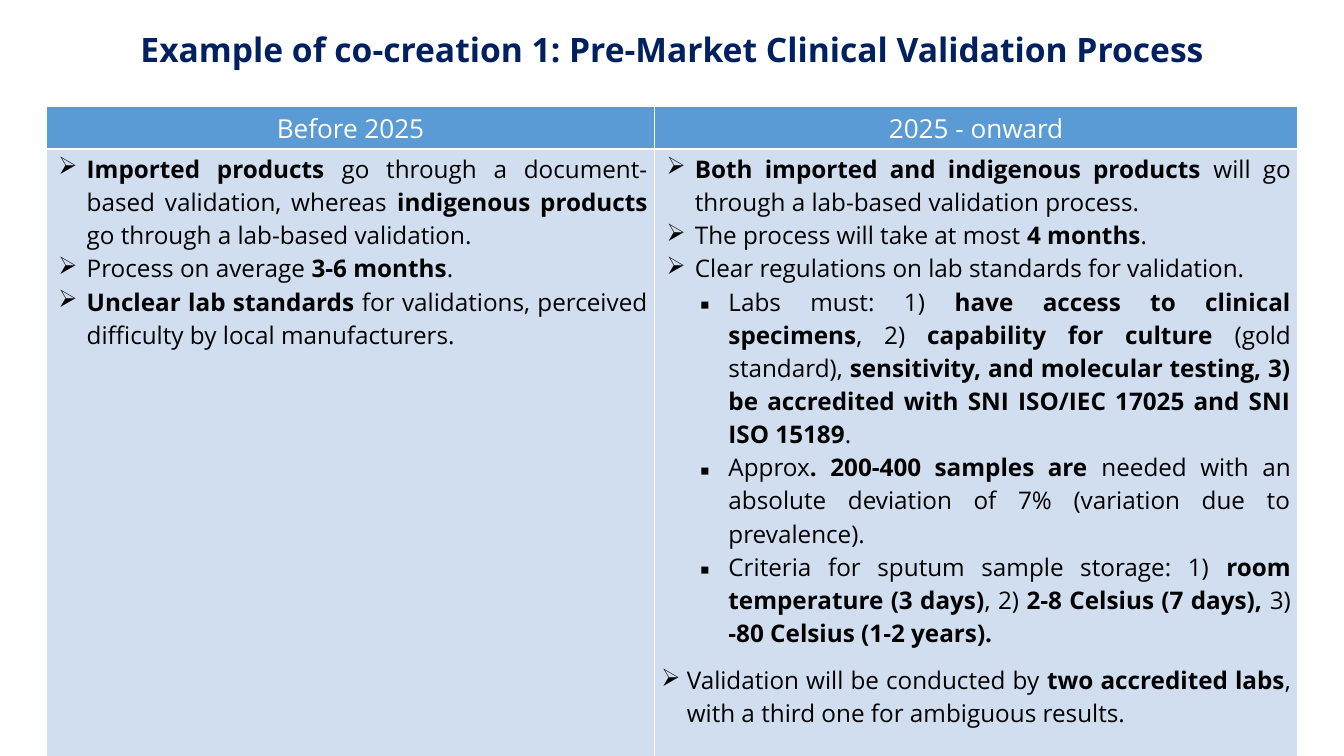
from dataclasses import dataclass

import pptx
import pptx.dml.color
import pptx.enum.text
import pptx.oxml.ns
import pptx.util
from lxml import etree

PX = 9144
FONT = "Open Sans"
ALIGN = pptx.enum.text.PP_ALIGN
ANCHOR = pptx.enum.text.MSO_ANCHOR
NAVY, BLUE, PALE, WHITE, BLACK = "002060", "5B9BD5", "D0DEEF", "FFFFFF", "000000"


@dataclass(frozen=True)
class Span:
    text: str
    bold: bool = False


@dataclass(frozen=True)
class Mark:
    symbol: str
    font: str


ARROW = Mark("➢", "OpenSymbol")
SQUARE = Mark("▪", "Noto Sans Symbols")


@dataclass(frozen=True)
class Bullet:
    spans: tuple[Span, ...]
    level: int = 0
    margin: int = 50
    hanging: int = 42
    before: int = 0
    mark: Mark = ARROW


@dataclass(frozen=True)
class Period:
    heading: str
    width: int
    bullets: tuple[Bullet, ...]


def strong(text: str) -> Span:
    return Span(text, True)


def bullet(*spans: Span) -> Bullet:
    return Bullet(spans)


def sub_bullet(*spans: Span) -> Bullet:
    return Bullet(spans, level=1, margin=100, mark=SQUARE)


PERIODS = (
    Period("Before 2025", 905, (
        bullet(strong("Imported products "),
               Span("go through a document-based validation, whereas "),
               strong("indigenous products "),
               Span("go through a lab-based validation. ")),
        bullet(Span("Process on average "), strong("3-6 months"), Span(". ")),
        bullet(strong("Unclear lab standards "),
               Span("for validations, perceived difficulty by local manufacturers. ")),
    )),
    Period("2025 - onward", 957, (
        bullet(strong("Both imported and indigenous products "),
               Span("will go through a lab-based validation process. ")),
        bullet(Span("The process will take at most "), strong("4 months"), Span(". ")),
        bullet(Span("Clear regulations on lab standards for validation. ")),
        sub_bullet(Span("Labs must: 1) "),
                   strong("have access to clinical specimens"),
                   Span(", 2) "),
                   strong("capability for culture"),
                   Span(" (gold standard), "),
                   strong("sensitivity, and molecular testing, 3) be accredited "
                          "with SNI ISO/IEC 17025 and SNI ISO 15189"),
                   Span(". ")),
        sub_bullet(Span("Approx"),
                   strong(". 200-400 samples are "),
                   Span("needed with an absolute deviation of 7% "
                        "(variation due to prevalence). ")),
        sub_bullet(Span("Criteria for sputum sample storage: 1) "),
                   strong("room temperature (3 days)"),
                   Span(", 2) "),
                   strong("2-8 Celsius (7 days), "),
                   Span("3) "),
                   strong("-80 Celsius (1-2 years). ")),
        Bullet((Span("Validation will be conducted by "),
                strong("two accredited labs"),
                Span(", with a third one for ambiguous results. ")),
               margin=38, hanging=38, before=15),
    )),
)


def px(length: int) -> pptx.util.Emu:
    return pptx.util.Emu(length * PX)


def rgb(value: str) -> pptx.dml.color.RGBColor:
    return pptx.dml.color.RGBColor.from_string(value)


def child(parent, tag: str, **attributes: str):
    element = etree.SubElement(parent, pptx.oxml.ns.qn(tag))
    for key, value in attributes.items():
        element.set(key, value)
    return element


def add_span(paragraph, span: Span, size: int, color: str) -> None:
    run = paragraph.add_run()
    run.text = span.text
    run.font.name = FONT
    run.font.size = pptx.util.Pt(size)
    run.font.bold = span.bold
    run.font.color.rgb = rgb(color)


def style_cell(cell, fill: str, bottom: int) -> None:
    properties = cell._tc.get_or_add_tcPr()
    for tag, points in (("a:lnL", 1), ("a:lnR", 1), ("a:lnT", 1), ("a:lnB", bottom)):
        line = child(properties, tag, w=str(pptx.util.Pt(points)))
        child(child(line, "a:solidFill"), "a:srgbClr", val=WHITE)
    cell.fill.solid()
    cell.fill.fore_color.rgb = rgb(fill)


def add_bullet(paragraph, item: Bullet) -> None:
    paragraph.alignment = ALIGN.JUSTIFY
    paragraph.level = item.level
    paragraph.space_before = pptx.util.Pt(item.before)
    properties = paragraph._p.get_or_add_pPr()
    properties.set("marL", str(px(item.margin)))
    properties.set("indent", str(px(-item.hanging)))
    child(child(properties, "a:buClr"), "a:srgbClr", val=BLACK)
    child(properties, "a:buFont", typeface=item.mark.font)
    child(properties, "a:buChar", char=item.mark.symbol)
    for span in item.spans:
        add_span(paragraph, span, 26, BLACK)


def add_title(slide, text: str) -> None:
    title = slide.shapes.title
    title.left, title.top, title.width, title.height = map(px, (138, 20, 1725, 113))
    title.text_frame.vertical_anchor = ANCHOR.MIDDLE
    paragraph = title.text_frame.paragraphs[0]
    paragraph.alignment = ALIGN.CENTER
    paragraph.line_spacing = 0.9
    add_span(paragraph, strong(text), 36, NAVY)


def add_comparison(slide, periods: tuple[Period, ...]) -> None:
    heights = (57, 905)
    width = sum(period.width for period in periods)
    table = slide.shapes.add_table(
        len(heights), len(periods), px(69), px(159), px(width), px(sum(heights))).table
    for row, height in zip(table.rows, heights):
        row.height = px(height)
    for index, period in enumerate(periods):
        table.columns[index].width = px(period.width)
        heading, body = table.cell(0, index), table.cell(1, index)
        style_cell(heading, BLUE, 3)
        style_cell(body, PALE, 1)
        heading.vertical_anchor = ANCHOR.MIDDLE
        paragraph = heading.text_frame.paragraphs[0]
        paragraph.alignment = ALIGN.CENTER
        add_span(paragraph, Span(period.heading), 28, WHITE)
        frame = body.text_frame
        for position, item in enumerate(period.bullets):
            add_bullet(frame.add_paragraph() if position else frame.paragraphs[0], item)


def main() -> None:
    deck = pptx.Presentation()
    deck.slide_width, deck.slide_height = px(2000), px(1125)
    slide = deck.slides.add_slide(deck.slide_layouts[5])
    add_title(slide, "Example of co-creation 1: Pre-Market Clinical Validation Process")
    add_comparison(slide, PERIODS)
    deck.save("out.pptx")


if __name__ == "__main__":
    main()
